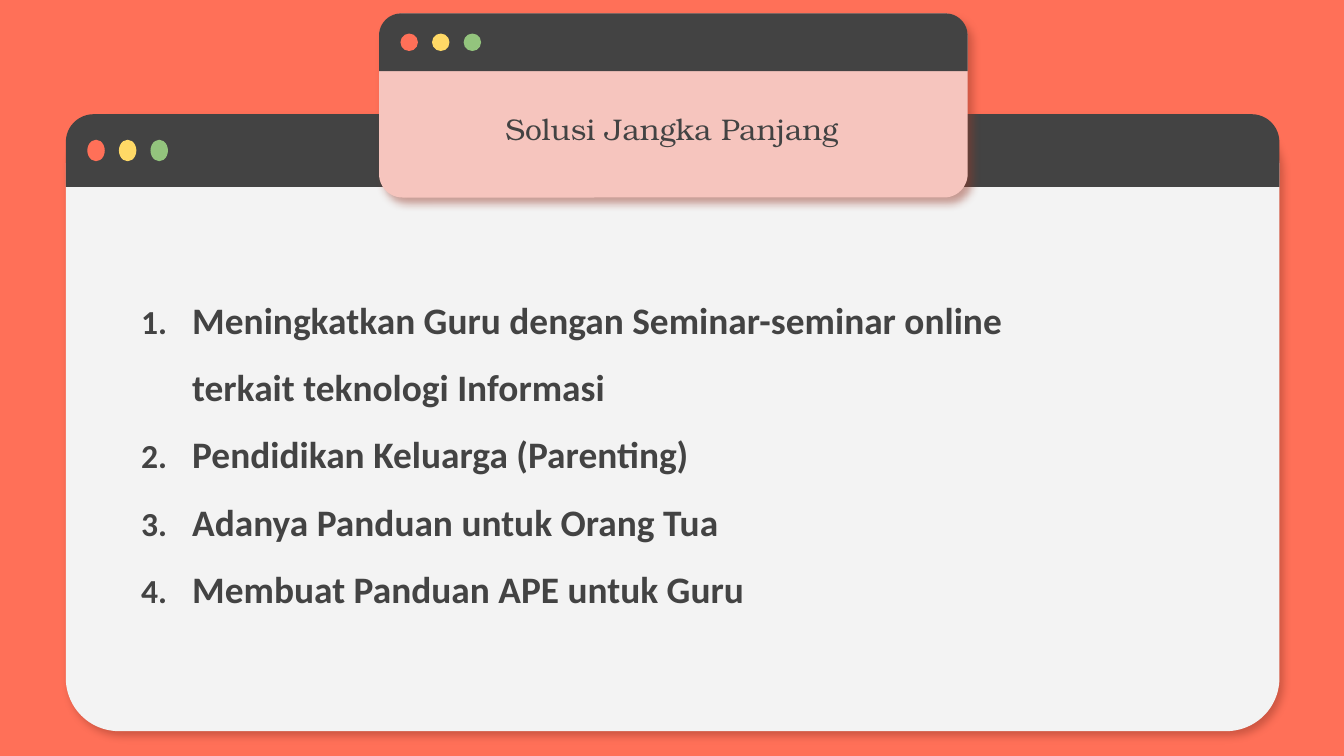
import dataclasses
import typing

import lxml.etree
import pptx
import pptx.dml.color
import pptx.enum.shapes
import pptx.enum.text
import pptx.oxml.ns
import pptx.util

Inches = pptx.util.Inches
Kind = pptx.enum.shapes.MSO_SHAPE
Align = pptx.enum.text.PP_ALIGN
qn = pptx.oxml.ns.qn

HUES = {
    "coral": "FF7058",
    "gold": "FFD966",
    "green": "93C47D",
    "dark": "434343",
    "paper": "F3F3F3",
    "pink": "F6C5BE",
    "shadow": "963A2A",
}
DOTS = ("coral", "gold", "green")
STEPS = (
    "Meningkatkan Guru dengan Seminar-seminar online terkait teknologi Informasi",
    "Pendidikan Keluarga (Parenting)",
    "Adanya Panduan untuk Orang Tua",
    "Membuat Panduan APE untuk Guru",
)


@dataclasses.dataclass(frozen=True)
class Window:
    left: float
    top: float
    width: float
    height: float
    bar: float
    dot: float
    curve: float
    fill: str


WINDOWS = (
    Window(0.49, 0.85, 9.03, 4.59, 0.54, 0.16, 0.086, "paper"),
    Window(2.82, 0.1, 4.38, 1.37, 0.43, 0.13, 0.128, "pink"),
)


def color(name: str) -> pptx.dml.color.RGBColor:
    return pptx.dml.color.RGBColor.from_string(HUES[name])


def add_node(parent: typing.Any, tag: str, **attrs: str) -> typing.Any:
    return lxml.etree.SubElement(parent, qn(tag), attrs)


def add_form(group: typing.Any, kind: typing.Any, box: tuple, fill: str,
             curves: tuple = ()) -> typing.Any:
    form = group.shapes.add_shape(kind, *map(Inches, box))
    form.shadow.inherit = False
    form.fill.solid()
    form.fill.fore_color.rgb = color(fill)
    form.line.fill.background()
    for i, curve in enumerate(curves):
        form.adjustments[i] = curve
    return form


def add_shadow(form: typing.Any) -> None:
    effects = form._element.spPr.find(qn("a:effectLst"))
    outer = add_node(effects, "a:outerShdw", blurRad=str(pptx.util.Pt(4.5)),
                     dist=str(pptx.util.Pt(3.8)), dir=str(49 * 60000),
                     algn="bl", rotWithShape="0")
    tint = add_node(outer, "a:srgbClr", val=HUES["shadow"])
    add_node(tint, "a:alpha", val="47000")


def draw_window(slide: typing.Any, win: Window) -> None:
    group = slide.shapes.add_group_shape()
    panel = add_form(group, Kind.ROUNDED_RECTANGLE,
                     (win.left, win.top, win.width, win.height),
                     win.fill, (win.curve,))
    add_shadow(panel)
    add_form(group, Kind.ROUND_2_SAME_RECTANGLE,
             (win.left, win.top, win.width, win.bar), "dark", (0.383, 0))
    top = win.top + (win.bar - win.dot) / 2
    for i, hue in enumerate(DOTS):
        add_form(group, Kind.OVAL,
                 (win.left + 0.16 + i * 0.235, top, 0.13, win.dot), hue)


def add_number(para: typing.Any, font: str) -> None:
    props = para._p.get_or_add_pPr()
    props.set("marL", str(Inches(0.38)))
    props.set("indent", str(Inches(-0.38)))
    add_node(props, "a:buSzPct", val="90000")
    add_node(props, "a:buFont", typeface=font)
    add_node(props, "a:buAutoNum", type="arabicPeriod")


def write_text(holder: typing.Any, lines: tuple, *, box: tuple, font: str,
               size: float, bold: bool = False, align: typing.Any = Align.LEFT,
               pitch: float = 1.0, number: bool = False) -> None:
    holder.left, holder.top, holder.width, holder.height = map(Inches, box)
    frame = holder.text_frame
    frame.word_wrap = True
    frame.auto_size = pptx.enum.text.MSO_AUTO_SIZE.NONE
    frame.vertical_anchor = pptx.enum.text.MSO_ANCHOR.MIDDLE
    frame.margin_left = frame.margin_right = Inches(0.1)
    frame.margin_top = frame.margin_bottom = Inches(0.1)
    for i, line in enumerate(lines):
        para = frame.add_paragraph() if i else frame.paragraphs[0]
        para.alignment = align
        para.line_spacing = pitch
        para.space_before = para.space_after = pptx.util.Pt(0)
        if number:
            add_number(para, font)
        run = para.add_run()
        run.text = line
        run.font.name = font
        run.font.size = pptx.util.Pt(size)
        run.font.bold = bold
        run.font.color.rgb = color("dark")


def main() -> None:
    deck = pptx.Presentation()
    deck.slide_width = Inches(10)
    deck.slide_height = deck.slide_width * 9 // 16
    slide = deck.slides.add_slide(deck.slide_layouts[0])
    slide.background.fill.solid()
    slide.background.fill.fore_color.rgb = color("coral")
    title, body = slide.shapes.title, slide.placeholders[1]
    for win in WINDOWS:
        draw_window(slide, win)
    write_text(body, STEPS, box=(0.95, 2.45, 7.05, 1.69), font="Calibri",
               size=20, bold=True, pitch=1.5, number=True)
    write_text(title, ("Solusi Jangka Panjang",), box=(2.76, 0.73, 4.48, 0.46),
               font="TeX Gyre Bonum", size=16, align=Align.CENTER)
    for holder in (body, title):
        slide.shapes._spTree.append(holder._element)
    deck.save("out.pptx")


if __name__ == "__main__":
    main()
